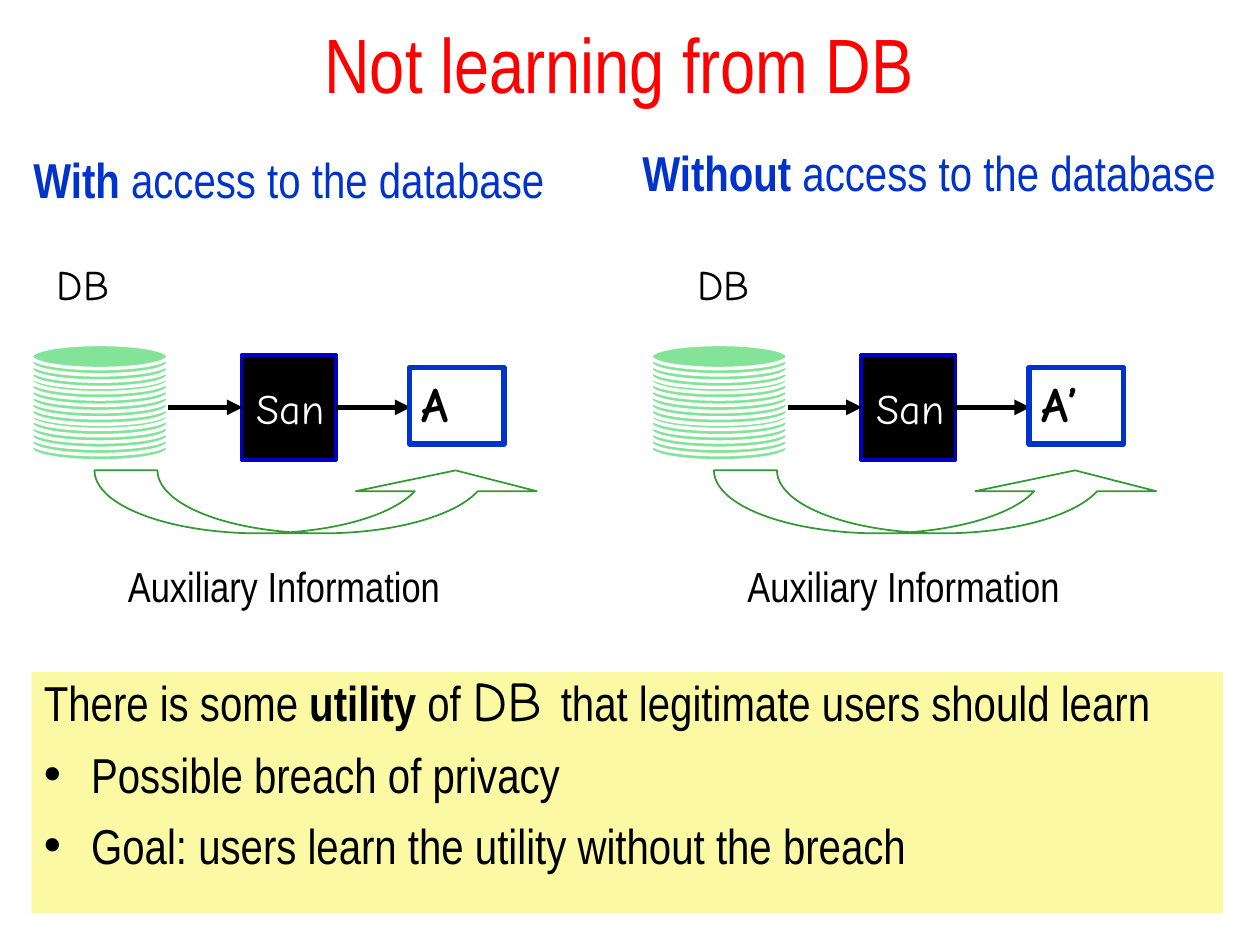
"""Build the slide comparing learning with and without access to the database."""
from lxml.etree import SubElement
from pptx import Presentation
from pptx.dml.color import RGBColor
from pptx.enum.shapes import MSO_CONNECTOR, MSO_SHAPE
from pptx.enum.text import MSO_ANCHOR, PP_ALIGN
from pptx.oxml.ns import qn
from pptx.util import Pt

PX = 7620
BLACK = RGBColor(0x00, 0x00, 0x00)
WHITE = RGBColor(0xFF, 0xFF, 0xFF)
RED = RGBColor(0xFF, 0x00, 0x00)
BLUE = RGBColor(0x00, 0x33, 0xCC)
NAVY = RGBColor(0x00, 0x00, 0xC6)
MINT = RGBColor(0x83, 0xE3, 0x98)
GREEN = RGBColor(0x33, 0x99, 0x33)
YELLOW = RGBColor(0xFB, 0xF9, 0xA3)
NARROW = "Arial Narrow"
COMIC = "Comic Neue"
HANG = 45 * PX


def add_box(parent, kind, bounds, fill=None, line=None, width=1):
    """Add a text box (kind None) or a preset shape, with text starting at the top left."""
    left, top, wide, high = [value * PX for value in bounds]
    if kind is None:
        box = parent.add_textbox(left, top, wide, high)
    else:
        box = parent.add_shape(kind, left, top, wide, high)
        box.shadow.inherit = False
        box.fill.background()
        box.line.fill.background()
        if fill is not None:
            box.fill.solid()
            box.fill.fore_color.rgb = fill
        if line is not None:
            box.line.color.rgb = line
            box.line.width = Pt(width)
    box.text_frame.word_wrap = True
    box.text_frame.vertical_anchor = MSO_ANCHOR.TOP
    return box


def write(para, spans, color, align=PP_ALIGN.LEFT):
    """Add runs given as (text, size, font, bold) to a paragraph."""
    para.alignment = align
    for text, size, font, bold in spans:
        span = para.add_run()
        span.text = text
        span.font.size = Pt(size)
        span.font.name = font
        span.font.bold = bold
        span.font.color.rgb = color


deck = Presentation()
deck.slide_width = 1200 * PX
deck.slide_height = 900 * PX
page = deck.slides.add_slide(deck.slide_layouts[6])
shapes = page.shapes

title = add_box(shapes, None, (0, 0, 1180, 120))
title.text_frame.vertical_anchor = MSO_ANCHOR.MIDDLE
write(title.text_frame.paragraphs[0], [("Not learning from DB", 44, NARROW, False)],
      RED, PP_ALIGN.CENTER)

panels = [
    (30, 40, "With", (20, 136, 530, 594), "A"),
    (620, 650, "Without", (600, 130, 580, 594), "A’"),
]
for left, label_left, access, heading_bounds, output in panels:
    heading = add_box(shapes, None, heading_bounds)
    write(heading.text_frame.paragraphs[0],
          [(access, 28, NARROW, True), (" access to the database", 28, NARROW, False)], BLUE)

    database = shapes.add_group_shape()
    for level in range(15, -1, -1):
        disk_top = 328 + round(level * 5.84)
        add_box(database.shapes, MSO_SHAPE.OVAL, (left, disk_top, 130, 23), MINT, WHITE, 2)

    add_box(shapes, MSO_SHAPE.RECTANGLE, (left + 200, 338, 90, 100), BLACK, NAVY, 2)
    for start in (left + 130, left + 290):
        arrow = shapes.add_connector(MSO_CONNECTOR.STRAIGHT, start * PX, 388 * PX,
                                     (start + 71) * PX, 388 * PX)
        arrow.line.color.rgb = BLACK
        arrow.line.width = Pt(3)
        SubElement(arrow.line._get_or_add_ln(), qn("a:tailEnd"), type="triangle")
        SubElement(arrow._element.spPr, qn("a:effectLst"))

    result = add_box(shapes, MSO_SHAPE.RECTANGLE, (left + 360, 350, 90, 73), None, BLUE, 3)
    write(result.text_frame.paragraphs[0], [(output, 28, COMIC, True)], BLACK)

    loop = add_box(shapes, MSO_SHAPE.CURVED_UP_ARROW, (left + 60, 448, 430, 60), None, GREEN)
    for index, value in enumerate((1.43, 2.87, 0.33)):
        loop.adjustments[index] = value

    auxiliary = add_box(shapes, None, (left + 80, 528, 330, 60))
    write(auxiliary.text_frame.paragraphs[0],
          [("Auxiliary Information", 24, NARROW, False)], BLACK)

    for text, bounds, color in (("San", (left + 200, 358, 94, 60), WHITE),
                                ("DB", (label_left, 240, 78, 60), BLACK)):
        label = add_box(shapes, None, bounds)
        label.text_frame.word_wrap = False
        write(label.text_frame.paragraphs[0], [(text, 24, COMIC, False)],
              color, PP_ALIGN.CENTER)

summary = add_box(shapes, MSO_SHAPE.RECTANGLE, (30, 640, 1135, 230), YELLOW)
opening = summary.text_frame.paragraphs[0]
opening.line_spacing = 0.8
write(opening, [
    ("There is some ", 28, NARROW, False),
    ("utility", 28, NARROW, True),
    (" of ", 28, NARROW, False),
    ("DB ", 32, COMIC, False),
    ("that legitimate users should learn", 28, NARROW, False),
], BLACK)
for point in ("Possible breach of privacy",
              "Goal: users learn the utility without the breach"):
    para = summary.text_frame.add_paragraph()
    para.space_before = Pt(7)
    write(para, [(point, 28, NARROW, False)], BLACK)
    properties = para._p.get_or_add_pPr()
    properties.set("marL", str(HANG))
    properties.set("indent", str(-HANG))
    SubElement(properties, qn("a:buFont"), typeface="Arial")
    SubElement(properties, qn("a:buChar"), char="•")

deck.save("out.pptx")
